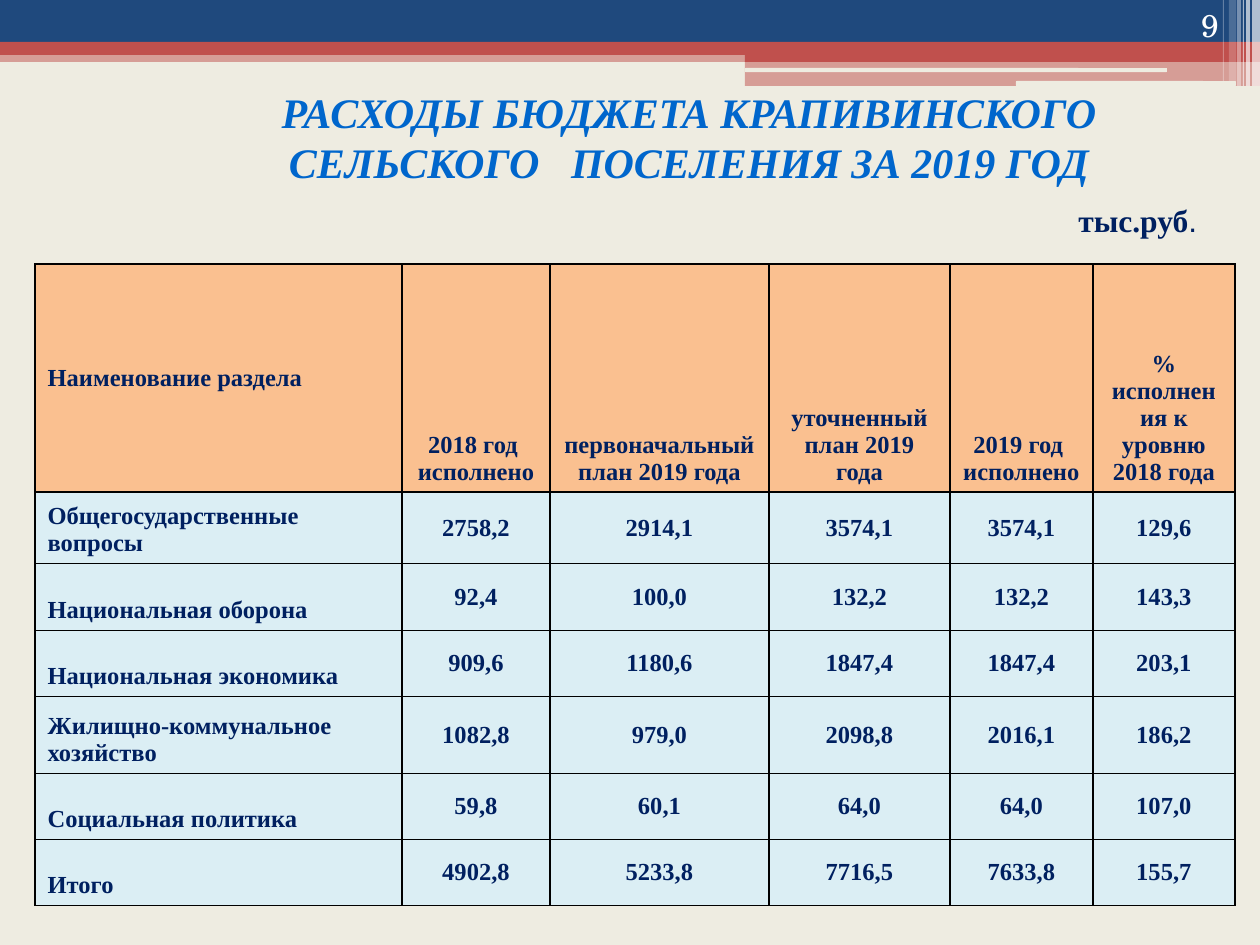
from lxml import etree
from pptx import Presentation
from pptx import util as u
from pptx.dml.color import RGBColor
from pptx.enum import shapes, text
from pptx.oxml.ns import qn

PX = 914400 / 126
COLORS = {
    "paper": "EEECE1", "navy": "1F497D", "red": "C0504D", "white": "FFFFFF",
    "title": "0066CC", "glow": "99CCFF", "ink": "002060", "black": "000000",
    "header": "FAC090", "body": "DBEEF4",
}
SERIF = "Times New Roman"
ALIGN, ANCHOR = text.PP_ALIGN, text.MSO_ANCHOR


def px(*values):
    return [u.Emu(round(value * PX)) for value in values]


def write(paragraph, words, color, align=ALIGN.LEFT, **font):
    paragraph.alignment = align
    run = paragraph.add_run()
    run.text = words
    for name, value in font.items():
        setattr(run.font, name, value)
    run.font.color.rgb = RGBColor.from_string(COLORS[color])
    return run


deck = Presentation()
deck.slide_width, deck.slide_height = px(1260, 945)
slide = deck.slides.add_slide(deck.slide_layouts[6])
slide.background.fill.solid()
slide.background.fill.fore_color.rgb = RGBColor.from_string(COLORS["paper"])

RECT = shapes.MSO_SHAPE.RECTANGLE
ROUND = shapes.MSO_SHAPE.ROUNDED_RECTANGLE
ribbons = [
    (RECT, 0, 50, 1260, 12, "red", 50),
    (RECT, 0, 0, 1260, 43, "navy", 100),
    (RECT, 0, 42, 1260, 13, "red", 100),
    (RECT, 745, 49, 515, 13, "red", 100),
    (RECT, 745, 61, 515, 25, "red", 50),
    (ROUND, 745, 68, 422, 4, "paper", 100),
    (ROUND, 1016, 81, 220, 5, "paper", 100),
    (RECT, 1252, 0, 8, 86, "white", 65),
    (RECT, 1246, 0, 4, 86, "white", 65),
    (RECT, 1243, 0, 1, 86, "white", 60),
    (RECT, 1237, 0, 4, 86, "white", 40),
    (RECT, 1229, 0, 7, 81, "white", 20),
    (RECT, 1223, 0, 1, 81, "white", 30),
]
for kind, left, top, width, height, color, opacity in ribbons:
    ribbon = slide.shapes.add_shape(kind, *px(left, top, width, height))
    ribbon.shadow.inherit = False
    ribbon.line.fill.background()
    ribbon.fill.solid()
    ribbon.fill.fore_color.rgb = RGBColor.from_string(COLORS[color])
    if opacity < 100:
        tint = ribbon.fill._xPr.find(".//" + qn("a:srgbClr"))
        etree.SubElement(tint, qn("a:alpha"), val=str(opacity * 1000))

frames = {}
for part, box, anchor in [
    ("title", (223, 55, 932, 164), ANCHOR.MIDDLE),
    ("number", (1126, 0, 105, 50), ANCHOR.BOTTOM),
    ("unit", (1066, 195, 149, 50), ANCHOR.TOP),
]:
    frames[part] = slide.shapes.add_textbox(*px(*box)).text_frame
    frames[part].word_wrap = True
    frames[part].vertical_anchor = anchor

heading = write(
    frames["title"].paragraphs[0],
    "РАСХОДЫ БЮДЖЕТА КРАПИВИНСКОГО СЕЛЬСКОГО   ПОСЕЛЕНИЯ ЗА 2019 ГОД",
    "title", ALIGN.CENTER, name=SERIF, size=u.Pt(24), bold=True, italic=True,
)
outline = etree.Element(qn("a:ln"), w=str(u.Pt(1.5)))
glow = etree.SubElement(outline, qn("a:solidFill"))
etree.SubElement(glow, qn("a:srgbClr"), val=COLORS["glow"])
heading.font._rPr.insert(0, outline)

write(frames["number"].paragraphs[0], "9", "white", ALIGN.RIGHT,
      name="TeX Gyre Schola", size=u.Pt(18))
unit = frames["unit"].paragraphs[0]
write(unit, "тыс.руб", "ink", name=SERIF, size=u.Pt(18), bold=True)
write(unit, ".", "ink", name="Arial", size=u.Pt(18), bold=False)

rows = [
    ("Наименование раздела", "2018 год \nисполнено", "первоначальный план 2019 года",
     "уточненный план 2019 года", "2019 год \nисполнено", "% исполнения к уровню 2018 года"),
    ("Общегосударственные вопросы", "2758,2", "2914,1", "3574,1", "3574,1", "129,6"),
    ("Национальная оборона", "92,4", "100,0", "132,2", "132,2", "143,3"),
    ("Национальная экономика", "909,6", "1180,6", "1847,4", "1847,4", "203,1"),
    ("Жилищно-коммунальное хозяйство", "1082,8", "979,0", "2098,8", "2016,1", "186,2"),
    ("Социальная политика", "59,8", "60,1", "64,0", "64,0", "107,0"),
    ("Итого", "4902,8", "5233,8", "7716,5", "7633,8", "155,7"),
]
widths = [367, 148, 219, 181, 143, 142]
heights = [228, 66, 67, 66, 77, 66, 66]
budget = slide.shapes.add_table(
    len(rows), len(widths), *px(35, 264, sum(widths), sum(heights))).table
for column, width in zip(budget.columns, px(*widths)):
    column.width = width
for line, height in zip(budget.rows, px(*heights)):
    line.height = height

for r, row in enumerate(rows):
    for c, words in enumerate(row):
        cell = budget.cell(r, c)
        cell.vertical_anchor = ANCHOR.MIDDLE if (r == 0) == (c == 0) else ANCHOR.BOTTOM
        for i, words_line in enumerate(words.split("\n")):
            frame = cell.text_frame
            paragraph = frame.add_paragraph() if i else frame.paragraphs[0]
            write(paragraph, words_line, "ink", ALIGN.CENTER if c else ALIGN.LEFT,
                  name=SERIF, size=u.Pt(14), bold=True)
        properties = cell._tc.get_or_add_tcPr()
        for side in ("a:lnL", "a:lnR", "a:lnT", "a:lnB"):
            border = etree.SubElement(properties, qn(side), w=str(u.Pt(1)))
            stroke = etree.SubElement(border, qn("a:solidFill"))
            etree.SubElement(stroke, qn("a:srgbClr"), val=COLORS["black"])
        cell.fill.solid()
        cell.fill.fore_color.rgb = RGBColor.from_string(COLORS["body" if r else "header"])

deck.save("out.pptx")
